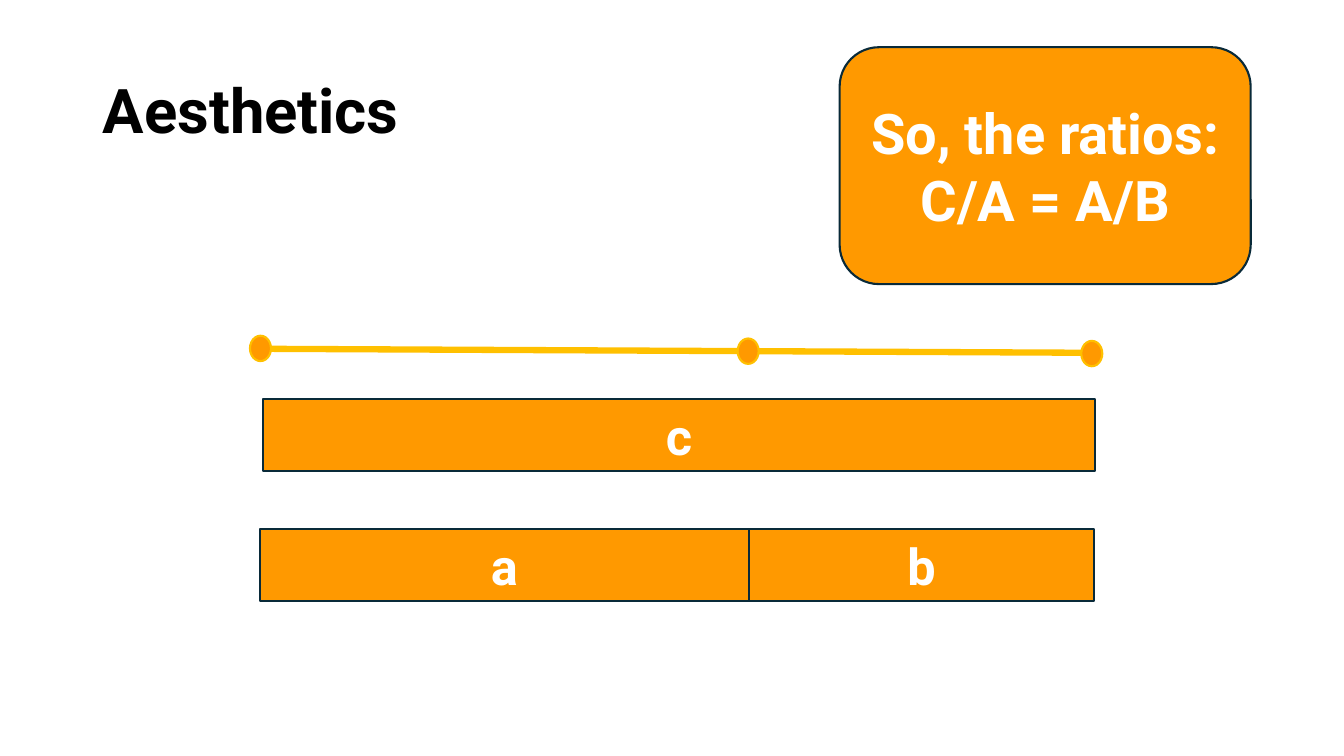
"""Build the Aesthetics slide that shows the golden ratio on a divided line."""
from lxml.etree import SubElement
from pptx import Presentation
from pptx.dml.color import RGBColor
from pptx.enum.shapes import MSO_CONNECTOR, MSO_SHAPE
from pptx.enum.text import MSO_ANCHOR, PP_ALIGN
from pptx.oxml.ns import qn
from pptx.util import Cm, Pt

FONT = "Roboto"
ORANGE, GOLD, NAVY = "FF9900", "FFC000", "092A39"
BLACK, WHITE = "000000", "FFFFFF"

HEADING = "Aesthetics"
RATIOS = ["So, the ratios:", "C/A = A/B"]
RATIO_BOX = (21.16, 1.19, 10.36, 5.97)
LINE_START, LINE_END = (27.58, 8.89), (6.63, 8.79)
DOT_WIDTH, DOT_HEIGHT = 0.53, 0.64
DOT_CORNERS = [(6.3, 8.46), (18.59, 8.53), (27.25, 8.59)]
BAR_HEIGHT = 1.8
SEGMENTS = [
    ("c", 6.63, 10.06, 20.96),
    ("a", 6.55, 13.34, 12.32),
    ("b", 18.87, 13.34, 8.71),
]


def color(code):
    return RGBColor.from_string(code)


def write(frame, lines, size, ink, alignment):
    frame.word_wrap = True
    frame.vertical_anchor = MSO_ANCHOR.MIDDLE
    for index, line in enumerate(lines):
        paragraph = frame.add_paragraph() if index else frame.paragraphs[0]
        paragraph.alignment = alignment
        run = paragraph.add_run()
        run.text = line
        run.font.name = FONT
        run.font.size = Pt(size)
        run.font.bold = True
        run.font.color.rgb = color(ink)


def add_figure(slide, preset, box, outline, lines=(), size=36):
    figure = slide.shapes.add_shape(preset, *map(Cm, box))
    figure.shadow.inherit = False
    figure.fill.solid()
    figure.fill.fore_color.rgb = color(ORANGE)
    figure.line.color.rgb = color(outline)
    figure.line.width = Pt(1.5)
    write(figure.text_frame, lines, size, WHITE, PP_ALIGN.CENTER)


def add_title(slide):
    title = slide.shapes.title
    title.left, title.top, title.width, title.height = map(Cm, (2.34, 1.02, 29.21, 3.68))
    write(title.text_frame, [HEADING], 44, BLACK, PP_ALIGN.LEFT)
    title.text_frame.paragraphs[0].line_spacing = 0.9


def add_divided_line(slide):
    divided_line = slide.shapes.add_connector(
        MSO_CONNECTOR.STRAIGHT, *map(Cm, LINE_START + LINE_END))
    divided_line.line.color.rgb = color(GOLD)
    divided_line.line.width = Pt(4.5)
    SubElement(divided_line._element.spPr, qn("a:effectLst"))
    for left, top in DOT_CORNERS:
        add_figure(slide, MSO_SHAPE.OVAL, (left, top, DOT_WIDTH, DOT_HEIGHT), GOLD)


def main():
    deck = Presentation()
    deck.slide_width, deck.slide_height = Cm(33.87), Cm(19.05)
    slide = deck.slides.add_slide(deck.slide_layouts[5])
    add_title(slide)
    add_divided_line(slide)
    for label, left, top, width in SEGMENTS:
        add_figure(slide, MSO_SHAPE.RECTANGLE, (left, top, width, BAR_HEIGHT), NAVY, [label])
    add_figure(slide, MSO_SHAPE.ROUNDED_RECTANGLE, RATIO_BOX, NAVY, RATIOS, 40)
    deck.save("out.pptx")


if __name__ == "__main__":
    main()
